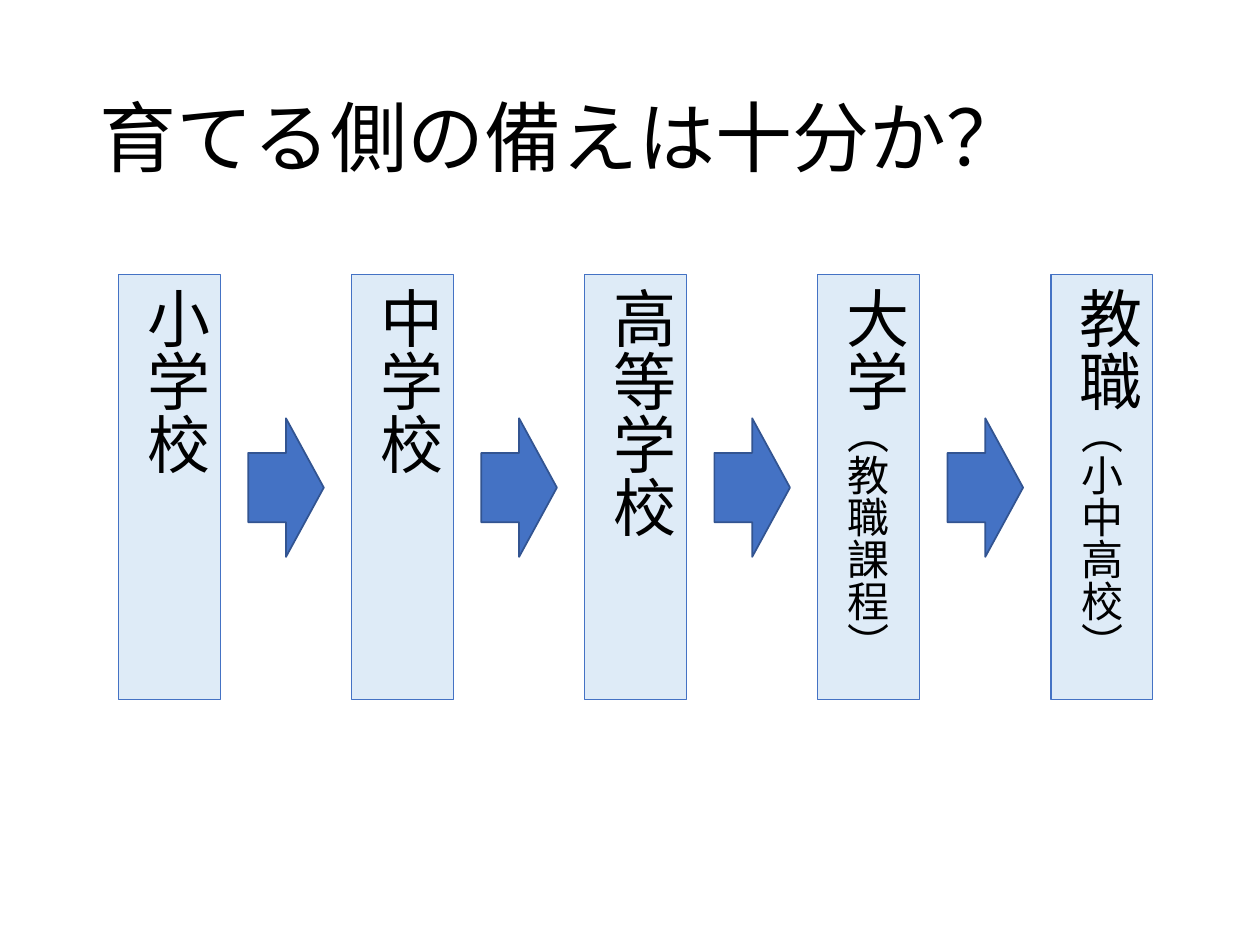
from pptx import Presentation
from pptx import util as u
from pptx.dml.color import RGBColor
from pptx.enum import shapes, text

COLORS = {"text": "000000", "box": "DEEBF7", "accent": "4472C4", "edge": "325491"}
STAGES = [
    [("小学校", 36)],
    [("中学校", 36)],
    [("高等学校", 36)],
    [("大学", 36), ("（教職課程）", 24)],
    [("教職", 36), ("（小中高校）", 24)],
]
LEFT, PITCH, ARROW_OFFSET = 0.94, 1.85, 1.03


class Deck:
    font = "Calibri"

    def __init__(self, prs):
        self.s = prs.slides.add_slide(prs.slide_layouts[5])

    def color(self, name):
        return RGBColor.from_string(COLORS[name])

    def runs(self, p, parts):
        for words, size in parts:
            r = p.add_run()
            r.text = words
            for key, value in {"name": self.font, "size": u.Pt(size)}.items():
                setattr(r.font, key, value)
            r.font.color.rgb = self.color("text")

    def title(self, words, box):
        sp = self.s.shapes.title
        for key, value in zip(("left", "top", "width", "height"), box):
            setattr(sp, key, u.Inches(value))
        tf = sp.text_frame
        tf.vertical_anchor = text.MSO_ANCHOR.MIDDLE
        p = tf.paragraphs[0]
        for key, value in {"alignment": text.PP_ALIGN.LEFT, "line_spacing": 0.9}.items():
            setattr(p, key, value)
        self.runs(p, [(words, 44)])

    def shape(self, kind, box, fill, line, width):
        sp = self.s.shapes.add_shape(kind, *map(u.Inches, box))
        sp.shadow.inherit = False
        sp.fill.solid()
        sp.fill.fore_color.rgb = self.color(fill)
        sp.line.color.rgb = self.color(line)
        sp.line.width = u.Pt(width)
        return sp

    def stage(self, parts, box):
        sp = self.shape(shapes.MSO_SHAPE.RECTANGLE, box, "box", "accent", 0.75)
        tf = sp.text_frame
        for key, value in {"word_wrap": True, "vertical_anchor": text.MSO_ANCHOR.TOP}.items():
            setattr(tf, key, value)
        tf._txBody.bodyPr.set("vert", "eaVert")
        p = tf.paragraphs[0]
        p.alignment = text.PP_ALIGN.LEFT
        self.runs(p, parts)

    def arrow(self, box):
        self.shape(shapes.MSO_SHAPE.RIGHT_ARROW, box, "accent", "edge", 1)


def main():
    prs = Presentation()
    prs.slide_width, prs.slide_height = u.Inches(10), u.Inches(7.5)
    deck = Deck(prs)
    deck.title("育てる側の備えは十分か？", (0.69, 0.4, 8.62, 1.45))
    for i, parts in enumerate(STAGES):
        x = LEFT + i * PITCH
        deck.stage(parts, (x, 2.18, 0.81, 3.37))
        if i < len(STAGES) - 1:
            deck.arrow((x + ARROW_OFFSET, 3.32, 0.6, 1.1))
    prs.save("out.pptx")


if __name__ == "__main__":
    main()
